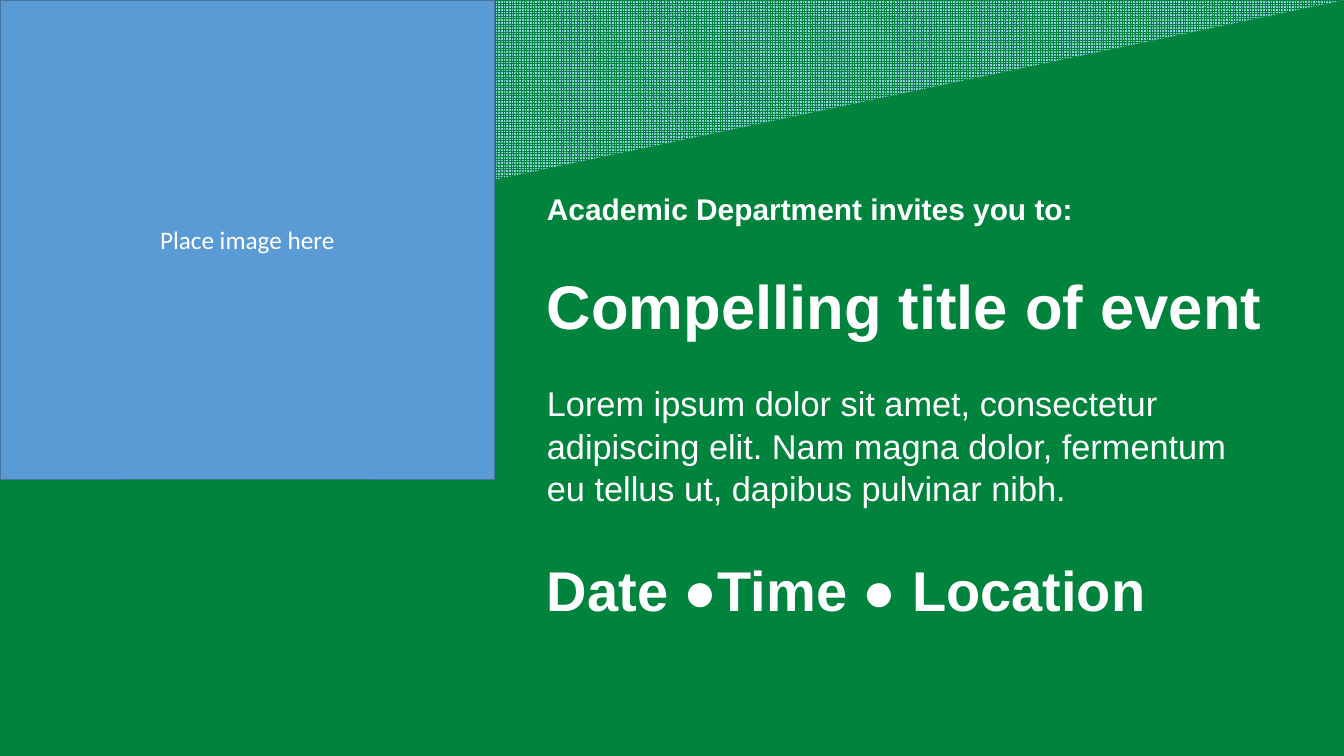
from dataclasses import dataclass

from pptx import Presentation
from pptx.dml.color import RGBColor
from pptx.enum.dml import MSO_PATTERN
from pptx.enum.shapes import MSO_SHAPE
from pptx.enum.text import MSO_ANCHOR, PP_ALIGN
from pptx.util import Cm, Pt

RECT = MSO_SHAPE.RECTANGLE
WEDGE = MSO_SHAPE.RIGHT_TRIANGLE
SPHERE = MSO_PATTERN.SPHERE
MIDDLE = MSO_ANCHOR.MIDDLE
CENTER = PP_ALIGN.CENTER


@dataclass(frozen=True)
class Theme:
    green: RGBColor = RGBColor(0x00, 0x84, 0x3D)
    sky: RGBColor = RGBColor(0x99, 0xD6, 0xEA)
    blue: RGBColor = RGBColor(0x5B, 0x9B, 0xD5)
    edge: RGBColor = RGBColor(0x43, 0x73, 0x9E)
    white: RGBColor = RGBColor(0xFF, 0xFF, 0xFF)
    font: str = "Arial"
    label_font: str = "Calibri"
    label: float = 27
    intro: float = 32
    body: float = 36.8
    date: float = 60
    title: float = 66
    leading: float = 1.04


THEME = Theme()


def style(par, size, font, bold=False):
    for run in par.runs:
        run.font.size = Pt(size)
        run.font.name = font
        run.font.bold = bold
        run.font.color.rgb = THEME.white


def add_wedge(slide, left, top, width, height):
    """Patterned triangle with its right angle at the top left."""
    wedge = slide.shapes.add_shape(WEDGE, left, top, width, height)
    wedge.shadow.inherit = False
    wedge.rotation = 180
    wedge._element.spPr.xfrm.set("flipH", "1")
    wedge.fill.patterned()
    wedge.fill.pattern = SPHERE
    wedge.fill.fore_color.rgb = THEME.green
    wedge.fill.back_color.rgb = THEME.sky
    wedge.line.fill.background()


def add_photo(slide, left, top, width, height):
    """Labelled area that holds the place of the photo."""
    photo = slide.shapes.add_shape(RECT, left, top, width, height)
    photo.shadow.inherit = False
    photo.fill.solid()
    photo.fill.fore_color.rgb = THEME.blue
    photo.line.color.rgb = THEME.edge
    photo.line.width = Pt(1)
    frame = photo.text_frame
    frame.text = "Place image here"
    frame.vertical_anchor = MIDDLE
    par = frame.paragraphs[0]
    par.alignment = CENTER
    style(par, THEME.label, THEME.label_font)


def add_invite(slide, left, top):
    """Column of texts; each row has an offset from the top, width and height."""
    rows = [
        (0, 21.08, 1.63, "Academic Department invites you to:", THEME.intro, True),
        (2.9, 30.38, 3.07, "Compelling title of event", THEME.title, True),
        (7.24, 27.05, 6.55,
         "Lorem ipsum dolor sit amet, consectetur adipiscing elit. "
         "Nam magna dolor, fermentum eu tellus ut, dapibus pulvinar nibh.",
         THEME.body, False),
        (13.77, 23.16, 5.38, "Date ●Time ● Location", THEME.date, True),
    ]
    for down, width, height, words, size, bold in rows:
        box = slide.shapes.add_textbox(left, top + Cm(down), Cm(width), Cm(height))
        frame = box.text_frame
        frame.word_wrap = True
        frame.text = words
        par = frame.paragraphs[0]
        par.line_spacing = THEME.leading
        style(par, size, THEME.font, bold)


def main():
    deck = Presentation()
    deck.slide_width, deck.slide_height = Cm(50.8), Cm(28.58)
    slide = deck.slides.add_slide(deck.slide_layouts[6])

    # Background
    back = slide.background.fill
    back.solid()
    back.fore_color.rgb = THEME.green

    # Regions
    add_wedge(slide, 0, 0, deck.slide_width, Cm(10.74))
    add_invite(slide, Cm(20.42), Cm(7.01))
    add_photo(slide, 0, 0, Cm(18.69), Cm(18.11))

    deck.save("out.pptx")


if __name__ == "__main__":
    main()
